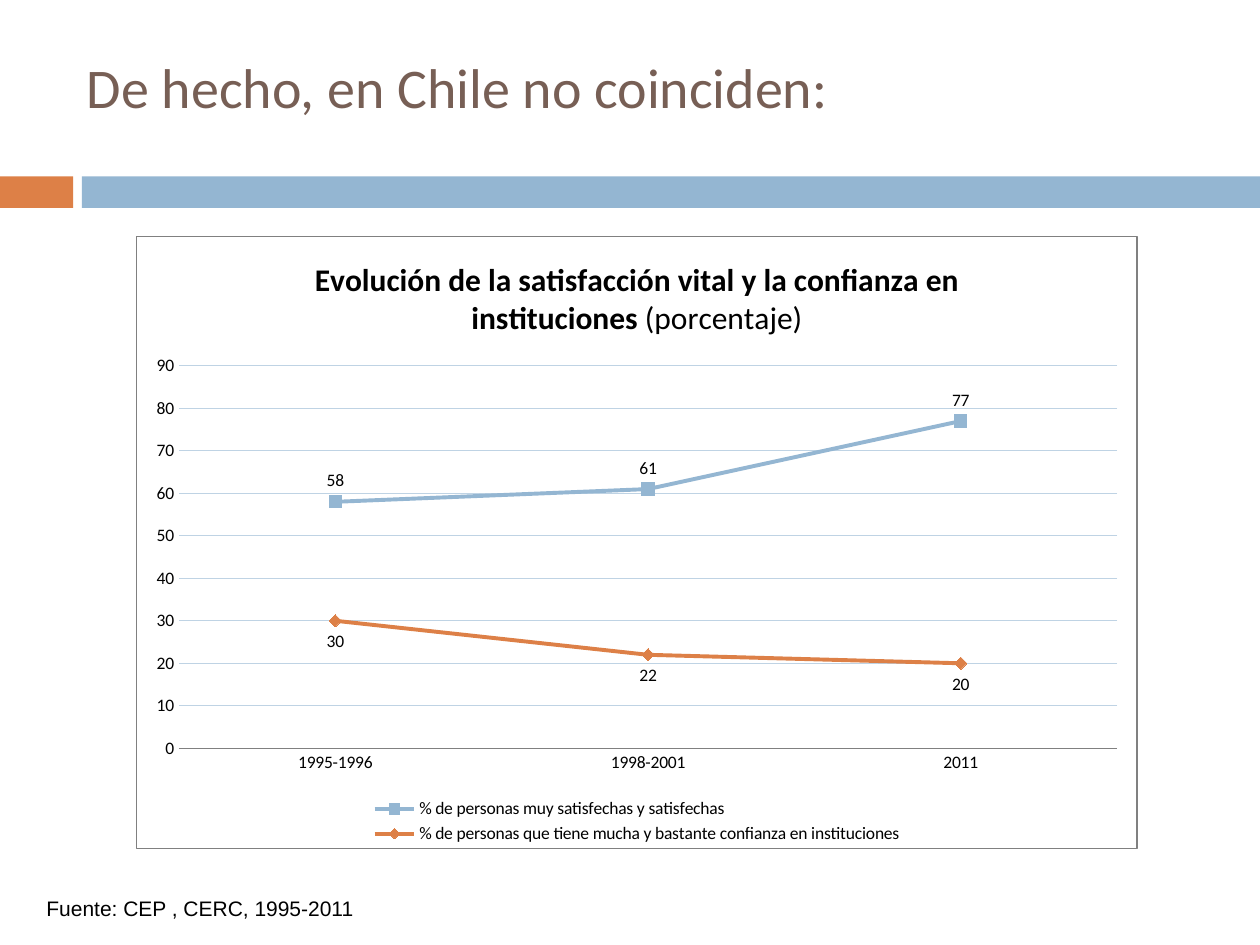
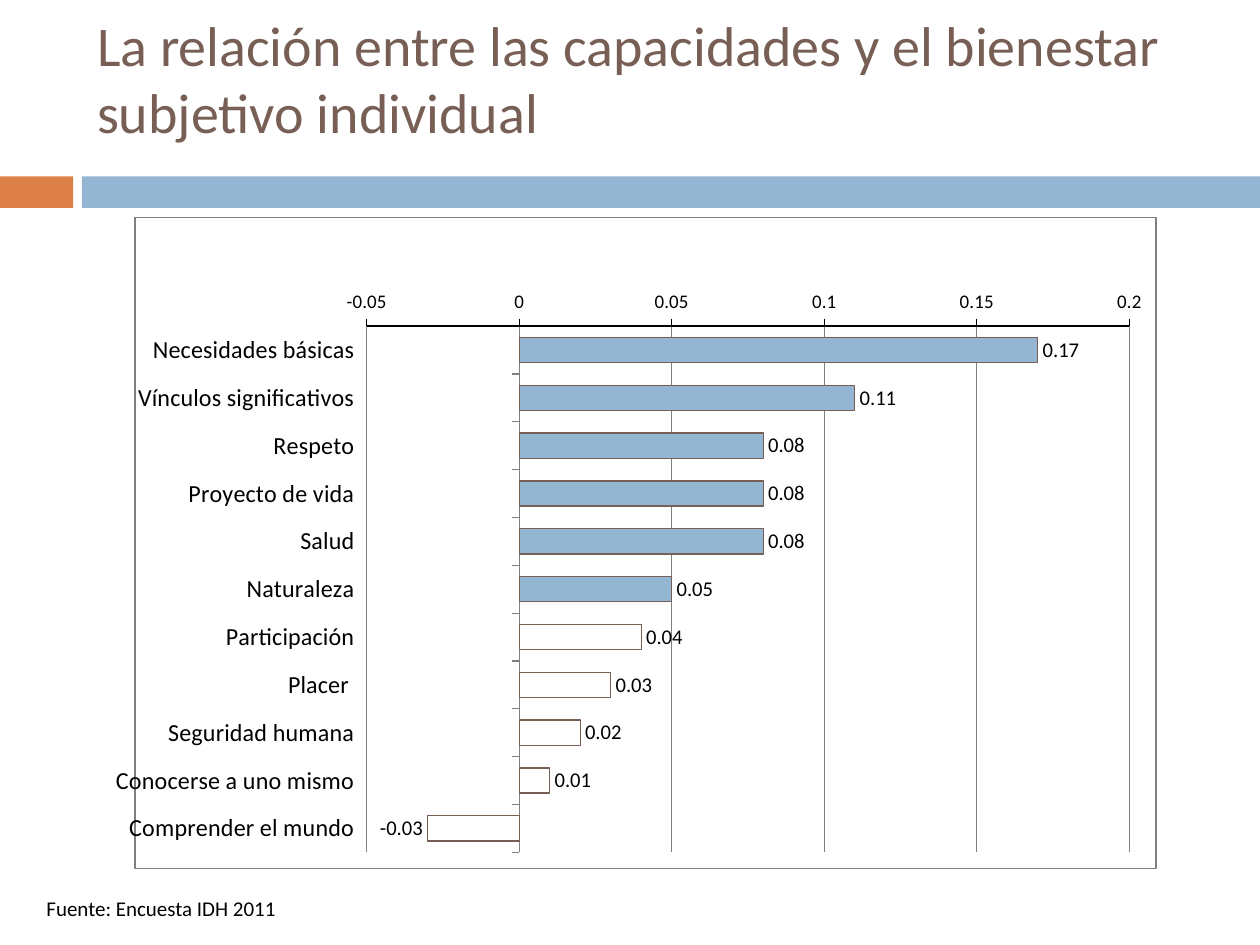
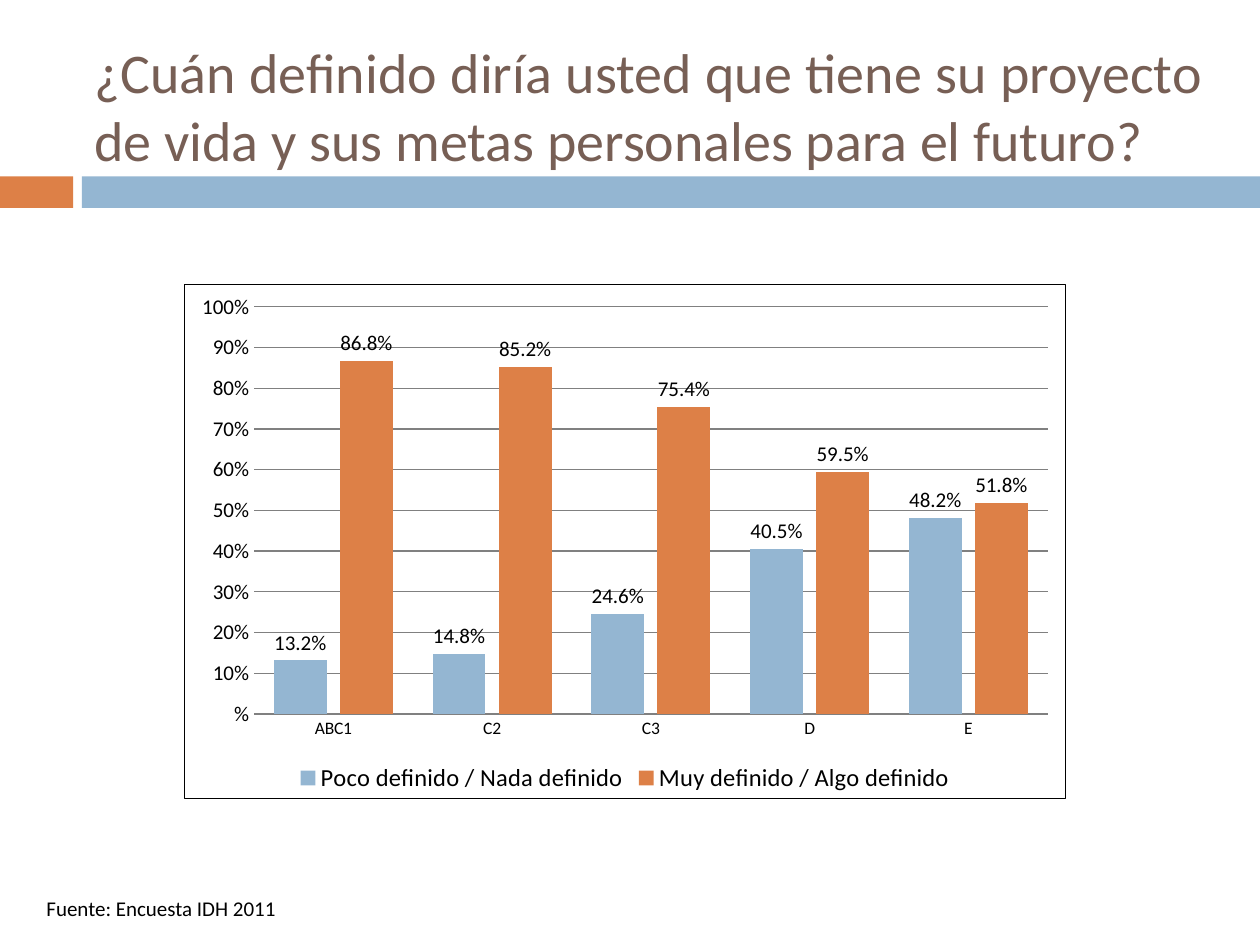
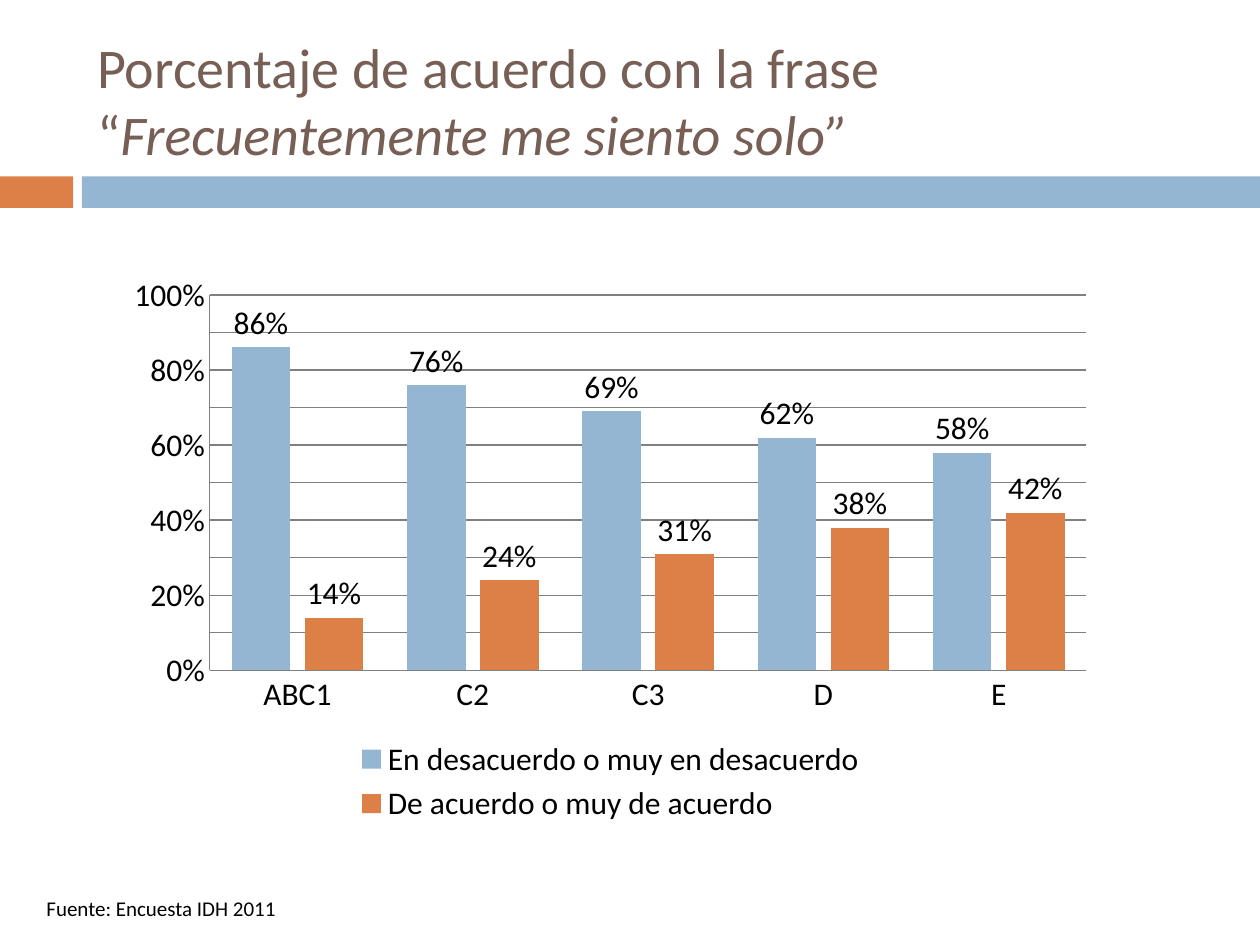
import pptx
import pptx.chart.data
import pptx.dml.color
import pptx.enum.chart
import pptx.enum.shapes
import pptx.enum.text
import pptx.oxml
import pptx.oxml.ns
import pptx.util

Inches = pptx.util.Inches
Pt = pptx.util.Pt
RGBColor = pptx.dml.color.RGBColor
qn = pptx.oxml.ns.qn
CHART = pptx.enum.chart.XL_CHART_TYPE
LABEL = pptx.enum.chart.XL_LABEL_POSITION
MARKER = pptx.enum.chart.XL_MARKER_STYLE
TICK = pptx.enum.chart.XL_TICK_MARK
ALIGN = pptx.enum.text.PP_ALIGN
ANCHOR = pptx.enum.text.MSO_ANCHOR

# Shared look
BLUE = RGBColor(0x94, 0xB6, 0xD2)
ORANGE = RGBColor(0xDD, 0x80, 0x47)
BROWN = RGBColor(0x77, 0x5F, 0x55)
PALE_BLUE = RGBColor(0xBF, 0xD3, 0xE4)
GREY = RGBColor(0x80, 0x80, 0x80)
BLACK = RGBColor(0, 0, 0)
WHITE = RGBColor(0xFF, 0xFF, 0xFF)
FONT = "Calibri"
SERIES_COLORS = (BLUE, ORANGE)
SOCIAL_GROUPS = ("ABC1", "C2", "C3", "D", "E")
SURVEY = "Fuente: Encuesta IDH 2011"


# Text
def add_text(p, text, size=12, color=BLACK, font=FONT, bold=False, italic=False):
    """Add formatted text to a paragraph; a newline becomes a line break."""
    for i, line in enumerate(text.split("\n")):
        if i:
            p.add_line_break()
        r = p.add_run()
        r.text = line
        r.font.size, r.font.name = Pt(size), font
        r.font.bold, r.font.italic = bold, italic
        r.font.color.rgb = color


def add_title_slide(prs, box, runs, align=ALIGN.LEFT, anchor=ANCHOR.MIDDLE):
    slide = prs.slides.add_slide(prs.slide_layouts[5])
    sp = slide.shapes.title
    sp.left, sp.top, sp.width, sp.height = map(Inches, box)
    tf = sp.text_frame
    tf.word_wrap = True
    tf.auto_size = pptx.enum.text.MSO_AUTO_SIZE.NONE
    tf.vertical_anchor = anchor
    p = tf.paragraphs[0]
    p.alignment = align
    for text, italic in runs:
        add_text(p, text, size=32, color=BROWN, italic=italic)
    return slide


def add_source(slide, text, width=2.09, font=FONT):
    sp = slide.shapes.add_textbox(Inches(0.27), Inches(7.06), Inches(width), Inches(0.3))
    sp.text_frame.word_wrap = False
    add_text(sp.text_frame.paragraphs[0], text, font=font)


# Bands, kept on the layout that all slides use
def add_bands(slide):
    tree = slide.slide_layout.shapes.element
    for i, (left, width, color) in enumerate(((0, 0.58, ORANGE), (0.65, 9.35, BLUE))):
        sp = slide.shapes.add_shape(pptx.enum.shapes.MSO_SHAPE.RECTANGLE,
                                    Inches(left), Inches(1.4), Inches(width), Inches(0.25))
        sp.shadow.inherit = False
        sp.fill.solid()
        sp.fill.fore_color.rgb = color
        sp.line.fill.background()
        sp.element.nvSpPr.cNvPr.set("id", str(101 + i))
        tree.insert(2 + i, sp.element)


# Charts
def set_line(line, color, width=0.75):
    line.color.rgb = color
    line.width = Pt(width)


def set_frame(chart, color):
    line = f'<a:solidFill><a:srgbClr val="{color}"/></a:solidFill>' if color else "<a:noFill/>"
    chart.element.find(qn("c:chart")).addnext(pptx.oxml.parse_xml(
        f'<c:spPr {pptx.oxml.ns.nsdecls("c", "a")}><a:noFill/>'
        f'<a:ln w="9525">{line}</a:ln></c:spPr>'))


def set_plot_box(chart, x, y, w, h):
    area = chart.element.find(qn("c:chart")).find(qn("c:plotArea"))
    for old in area.findall(qn("c:layout")):
        area.remove(old)
    sizes = "".join(f'<c:{k} val="{v}"/>' for k, v in zip("xywh", (x, y, w, h)))
    area.insert(0, pptx.oxml.parse_xml(
        f'<c:layout {pptx.oxml.ns.nsdecls("c")}><c:manualLayout><c:layoutTarget val="inner"/>'
        f'<c:xMode val="edge"/><c:yMode val="edge"/>{sizes}</c:manualLayout></c:layout>'))


def add_chart(slide, kind, box, cats, series, scale, size=10, frame=None,
              grid=GREY, number_format="General"):
    """Add a chart; scale is the minimum, maximum and step of the value axis."""
    data = pptx.chart.data.CategoryChartData(number_format=number_format)
    data.categories = cats
    for name, values in series:
        data.add_series(name, values)
    chart = slide.shapes.add_chart(kind, *map(Inches, box), data).chart
    chart.font.size, chart.font.name = Pt(size), FONT
    chart.font.color.rgb = BLACK
    chart.has_title = False
    chart.has_legend = len(series) > 1
    if chart.has_legend:
        chart.legend.position = pptx.enum.chart.XL_LEGEND_POSITION.BOTTOM
        chart.legend.include_in_layout = False
    set_frame(chart, frame)
    chart.plots[0].vary_by_categories = False

    axis = chart.value_axis
    axis.minimum_scale, axis.maximum_scale, axis.major_unit = scale
    axis.has_major_gridlines = True
    set_line(axis.major_gridlines.format.line, grid)
    for ax in (chart.category_axis, axis):
        ax.major_tick_mark = ax.minor_tick_mark = TICK.NONE
        set_line(ax.format.line, GREY)
    return chart


def set_labels(holder, size, position, number_format="General"):
    labels = holder.data_labels
    labels.show_value = True
    labels.position = position
    labels.font.size, labels.font.name = Pt(size), FONT
    labels.font.color.rgb = BLACK
    labels.number_format = number_format
    labels.number_format_is_linked = False


def fill_bar(bar, color):
    bar.format.fill.solid()
    bar.format.fill.fore_color.rgb = color


def add_group_columns(slide, box, series, size, label_size, axis_format, label_format, frame=None):
    """Add paired columns for each social group."""
    chart = add_chart(slide, CHART.COLUMN_CLUSTERED, box, SOCIAL_GROUPS, series,
                      (0, 1, 0.1), size, frame, number_format="0%")
    plot = chart.plots[0]
    plot.gap_width, plot.overlap = 75, -25
    chart.value_axis.tick_labels.number_format = axis_format
    chart.value_axis.tick_labels.number_format_is_linked = False
    for s, color in zip(plot.series, SERIES_COLORS):
        fill_bar(s, color)
        s.invert_if_negative = False
        set_labels(s, label_size, LABEL.OUTSIDE_END, label_format)
    return chart


# Slides
def build_trend(prs):
    slide = add_title_slide(prs, (0.59, 0.36, 8.66, 0.64),
                            [("De hecho, en Chile no coinciden:", False)], ALIGN.JUSTIFY)
    add_bands(slide)
    series = (("% de personas muy satisfechas y satisfechas", (58, 61, 77)),
              ("% de personas que tiene mucha y bastante confianza en instituciones",
               (30, 22, 20)))
    chart = add_chart(slide, CHART.LINE_MARKERS, (1.08, 1.87, 7.95, 4.87),
                      ("1995-1996", "1998-2001", "2011"), series, (0, 90, 10),
                      frame=GREY, grid=PALE_BLUE)
    chart.value_axis.format.line.fill.background()
    p = chart.chart_title.text_frame.paragraphs[0]
    add_text(p, "Evolución de la satisfacción vital y la confianza en instituciones",
             size=18, bold=True)
    add_text(p, " (porcentaje)", size=18)
    styles = zip(chart.plots[0].series, SERIES_COLORS, (MARKER.SQUARE, MARKER.DIAMOND),
                 (LABEL.ABOVE, LABEL.BELOW))
    for s, color, marker, position in styles:
        s.smooth = False
        set_line(s.format.line, color, 2.25)
        s.marker.style, s.marker.size = marker, 7
        fill_bar(s.marker, color)
        set_line(s.marker.format.line, color)
        set_labels(s, 10, position)
    add_source(slide, "Fuente: CEP , CERC, 1995-2011", 2.71, "Arial")


def build_capabilities(prs):
    slide = add_title_slide(
        prs, (0.67, 0.46, 8.82, 0.77),
        [("La relación entre las capacidades y el bienestar subjetivo individual", False)],
        anchor=ANCHOR.BOTTOM)
    slide.shapes.title.text_frame.margin_bottom = Inches(0.08)
    cats = ("Necesidades básicas", "Vínculos significativos", "Respeto", "Proyecto de vida",
            "Salud", "Naturaleza", "Participación", "Placer ", "Seguridad humana",
            "Conocerse a uno mismo", "Comprender el mundo")
    values = (0.17, 0.11, 0.08, 0.08, 0.08, 0.05, 0.04, 0.03, 0.02, 0.01, -0.03)
    chart = add_chart(slide, CHART.BAR_CLUSTERED, (0.92, 1.72, 8.26, 5.18), cats,
                      [("Series 1", values)], (-0.05, 0.2, 0.05), frame=GREY)
    set_plot_box(chart, 0.227, 0.167, 0.747, 0.808)
    chart.plots[0].gap_width = 90

    cat_axis, val_axis = chart.category_axis, chart.value_axis
    cat_axis.reverse_order = True
    cat_axis.tick_label_position = pptx.enum.chart.XL_TICK_LABEL_POSITION.LOW
    for ax, size in ((cat_axis, 14), (val_axis, 11)):
        ax.major_tick_mark = TICK.OUTSIDE
        ax.tick_labels.font.size = Pt(size)
    set_line(val_axis.format.line, BLACK)

    s = chart.plots[0].series[0]
    s.invert_if_negative = False
    fill_bar(s, WHITE)
    set_line(s.format.line, BROWN)
    for i, value in enumerate(values):
        if value >= 0.05:
            fill_bar(s.points[i], BLUE)
            set_line(s.points[i].format.line, BROWN)
    set_labels(s, 12, LABEL.OUTSIDE_END)
    add_source(slide, SURVEY)


def build_life_project(prs):
    slide = add_title_slide(
        prs, (0.65, 0.21, 9, 1.25),
        [("¿Cuán definido diría usted que tiene su proyecto de vida y sus metas personales "
          "para el futuro?", False)], ALIGN.JUSTIFY)
    series = (("Poco definido / Nada definido", (0.132, 0.148, 0.246, 0.405, 0.482)),
              ("Muy definido / Algo definido", (0.868, 0.852, 0.754, 0.595, 0.518)))
    chart = add_group_columns(slide, (1.46, 2.25, 7, 4.09), series, 10, 12,
                              "####%", "####.0%", BLACK)
    chart.value_axis.format.line.fill.background()
    chart.value_axis.tick_labels.font.size = Pt(12)
    chart.legend.font.size = Pt(14)
    add_source(slide, SURVEY)


def build_loneliness(prs):
    slide = add_title_slide(prs, (0.67, 0.25, 8.92, 1.08),
                            [("Porcentaje de acuerdo con la frase \n“", False),
                             ("Frecuentemente me siento solo”", True)])
    series = (("En desacuerdo o muy en desacuerdo", (0.86, 0.76, 0.69, 0.62, 0.58)),
              ("De acuerdo o muy de acuerdo", (0.14, 0.24, 0.31, 0.38, 0.42)))
    add_group_columns(slide, (0.91, 2.1, 7.87, 4.48), series, 18, 18, "0%", "0%")
    add_source(slide, SURVEY)


def main():
    prs = pptx.Presentation()
    prs.slide_width, prs.slide_height = Inches(10), Inches(7.5)
    build_trend(prs)
    build_capabilities(prs)
    build_life_project(prs)
    build_loneliness(prs)
    prs.save("out.pptx")


if __name__ == "__main__":
    main()
